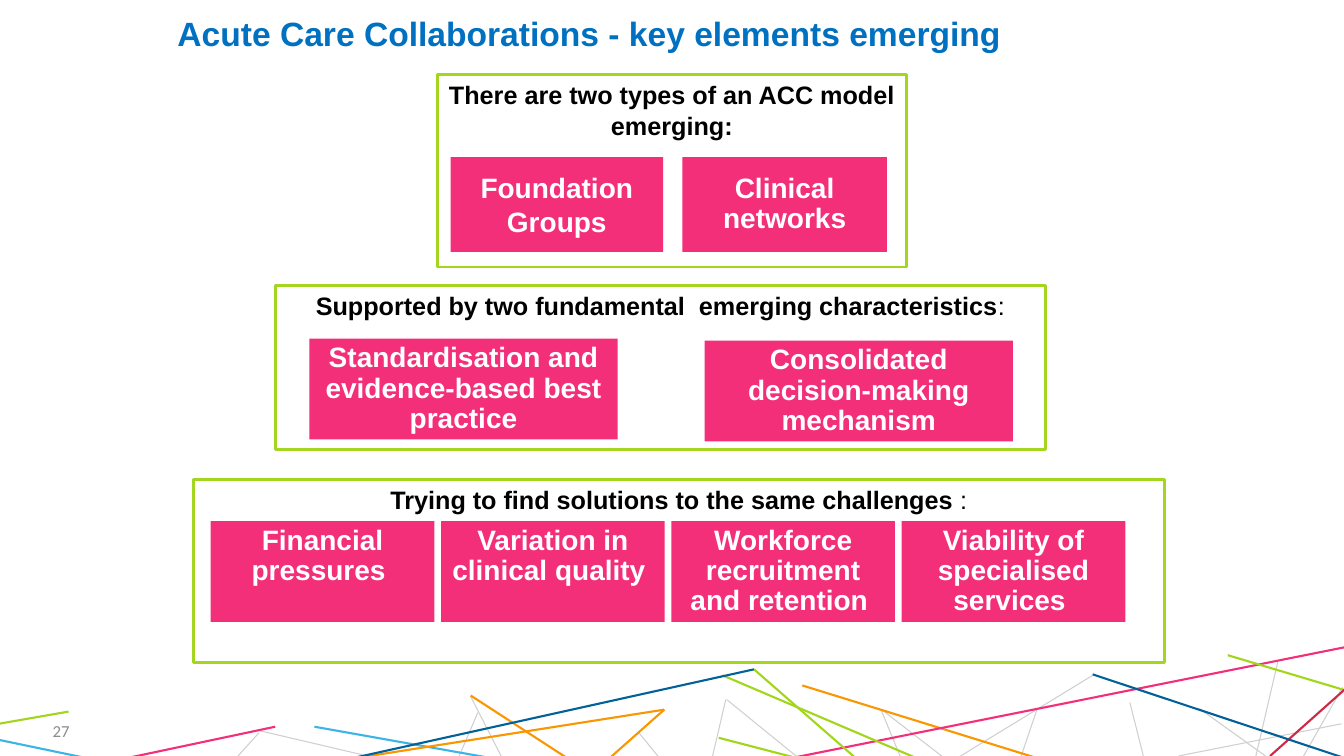
from lxml.etree import SubElement
from pptx import Presentation
from pptx.dml.color import RGBColor
from pptx.enum.shapes import MSO_CONNECTOR, MSO_SHAPE
from pptx.enum.text import MSO_ANCHOR as ANCHOR, PP_ALIGN as ALIGN
from pptx.oxml.ns import qn
from pptx.util import Pt

WHITE = RGBColor(0xFF, 0xFF, 0xFF)
BLACK = RGBColor(0x00, 0x00, 0x00)
BLUE = RGBColor(0x00, 0x70, 0xC0)
PINK = RGBColor(0xF3, 0x2F, 0x79)
LIME = RGBColor(0xA4, 0xD6, 0x20)
GREEN = RGBColor(0xA2, 0xD6, 0x1B)
SKY = RGBColor(0x3C, 0xB4, 0xE5)
ORANGE = RGBColor(0xF9, 0x96, 0x00)
RED = RGBColor(0xCE, 0x28, 0x43)
NAVY = RGBColor(0x00, 0x62, 0x98)
SILVER = RGBColor(0xD0, 0xCF, 0xCF)
GREY = RGBColor(0x8C, 0x8C, 0x8C)

# Footer line art: colour, width, then start and end points
LINE_ART = [
    (SILVER, 0.75, [
        (913, 471.6, 896.4, 542.9), (630.7, 507.6, 697.7, 559.4),
        (629.3, 506.9, 653, 564.5), (740.9, 506.2, 725.8, 550.8),
        (780.5, 482.4, 669.6, 550.1), (958.3, 517, 841.7, 540),
        (959, 491, 929.5, 542.9), (856.8, 506.2, 931, 559.4),
        (185, 523.4, 151.2, 560.9), (185.8, 522, 314.6, 552.2),
        (341.3, 509, 317.5, 564.5), (336.2, 497.5, 367.9, 559.4),
        (455.8, 522.7, 484.6, 558), (519.1, 499.7, 596.9, 563),
        (518.4, 499.7, 501.8, 571), (807.1, 501.8, 820.8, 556.6)]),
    (SKY, 1.5, [(-7.9, 527, 147.6, 559.4), (224.6, 519.1, 451.4, 559.4)]),
    (ORANGE, 1.5, [
        (336.2, 496.8, 440.6, 564.5), (474.5, 506.9, 149, 558),
        (474.5, 506.9, 417.6, 557.3), (573.1, 489.6, 796.3, 558.7)]),
    (PINK, 1.5, [(196.6, 519.1, 60.5, 547.9), (979.2, 458.6, 475.9, 559.4)]),
    (GREEN, 1.5, [
        (49, 508.3, -13, 519.1), (538.6, 478.1, 629.3, 557.3),
        (513.4, 527, 630, 557.3), (973.4, 496.8, 877, 468),
        (516.2, 482.4, 659.5, 543.6)]),
    (RED, 1.5, [(960.5, 492.5, 907.2, 540)]),
    (NAVY, 1.5, [(780.5, 481.7, 962.6, 542.2), (538.6, 478.1, 180.7, 557.3)]),
]

CHALLENGES = ["Financial pressures ", "Variation in clinical quality ",
              "Workforce recruitment and retention ",
              "Viability of specialised services "]


def write(tf, text, size=20, color=WHITE, bold=True, font="Arial", tail="",
          align=ALIGN.CENTER, anchor=ANCHOR.TOP, spacing=None, after=0,
          inset=(7.2, 3.6)):
    """Fill a text frame with one paragraph; tail is a closing run, not bold."""
    tf.word_wrap = True
    tf.vertical_anchor = anchor
    tf.margin_left = tf.margin_right = Pt(inset[0])
    tf.margin_top = tf.margin_bottom = Pt(inset[1])
    p = tf.paragraphs[0]
    p.alignment = align
    p.space_before, p.space_after = Pt(0), Pt(after)
    if spacing:
        p.line_spacing = spacing
    for part, is_bold in ((text, bold), (tail, False)):
        if part:
            r = p.add_run()
            r.text = part
            r.font.name, r.font.size, r.font.bold = font, Pt(size), is_bold
            r.font.color.rgb = color


class Deck:
    def __init__(self):
        self.prs = Presentation()
        self.prs.slide_width, self.prs.slide_height = Pt(960), Pt(540)
        self.s = self.prs.slides.add_slide(self.prs.slide_layouts[5])

    def title(self, text, x, y, w, h):
        sp = self.s.shapes.title
        sp.left, sp.top, sp.width, sp.height = Pt(x), Pt(y), Pt(w), Pt(h)
        write(sp.text_frame, text, size=24, color=BLUE, align=ALIGN.LEFT,
              inset=(6.5, 3))

    def label(self, text, x, y, w, h, **fmt):
        sp = self.s.shapes.add_textbox(Pt(x), Pt(y), Pt(w), Pt(h))
        write(sp.text_frame, text, **fmt)

    def line(self, x1, y1, x2, y2, color, width):
        c = self.s.shapes.add_connector(
            MSO_CONNECTOR.STRAIGHT, Pt(x1), Pt(y1), Pt(x2), Pt(y2))
        c.line.color.rgb, c.line.width = color, Pt(width)
        SubElement(c._element.spPr, qn("a:effectLst"))

    def box(self, text, x, y, w, h, fill, border=None, **fmt):
        sp = self.s.shapes.add_shape(
            MSO_SHAPE.RECTANGLE, Pt(x), Pt(y), Pt(w), Pt(h))
        sp.shadow.inherit = False
        sp.fill.solid()
        sp.fill.fore_color.rgb = fill
        if border:
            sp.line.color.rgb, sp.line.width = border, Pt(2)
        else:
            sp.line.fill.background()
        write(sp.text_frame, text, **fmt)

    def panel(self, text, x, y, w, h, tail=""):
        self.box(text, x, y, w, h, WHITE, LIME, size=18, color=BLACK,
                 tail=tail)

    def card(self, text, x, y, w, h=72, spacing=0.9, after=7, **fmt):
        self.box(text, x, y, w, h, PINK, spacing=spacing, after=after, **fmt)


def main():
    d = Deck()
    for color, width, lines in LINE_ART:
        for ends in lines:
            d.line(*ends, color, width)
    d.label("27", 11.5, 507.6, 45.4, 28.8, size=12, color=GREY, bold=False,
            font="Calibri", align=ALIGN.RIGHT, anchor=ANCHOR.MIDDLE)
    d.title("Acute Care Collaborations - key elements emerging",
            120.2, 6.5, 720, 35.3)

    d.panel("There are two types of an ACC model emerging:",
            312.5, 53.3, 334.8, 137.5)
    middle = dict(h=67.7, anchor=ANCHOR.MIDDLE, inset=(2.2, 2.2))
    d.card("Foundation Groups", 321.8, 112.3, 151.9, spacing=1, after=6,
           **middle)
    d.card("Clinical networks", 487.4, 112.3, 146.2, **middle)

    d.panel("Supported by two fundamental  emerging characteristics",
            196.6, 203.8, 550, 117.4, tail=":")
    d.card("Standardisation and evidence-based best practice",
           221, 241.9, 220.3)
    d.card("Consolidated decision-making mechanism", 503.3, 243.4, 220.3)

    d.panel("Trying to find solutions to the same challenges ",
            138.2, 342.7, 693.4, 130.3, tail=":")
    for i, text in enumerate(CHALLENGES):
        d.card(text, 150.5 + 164.5 * i, 372.2, 159.8)

    d.prs.save("out.pptx")


if __name__ == "__main__":
    main()
